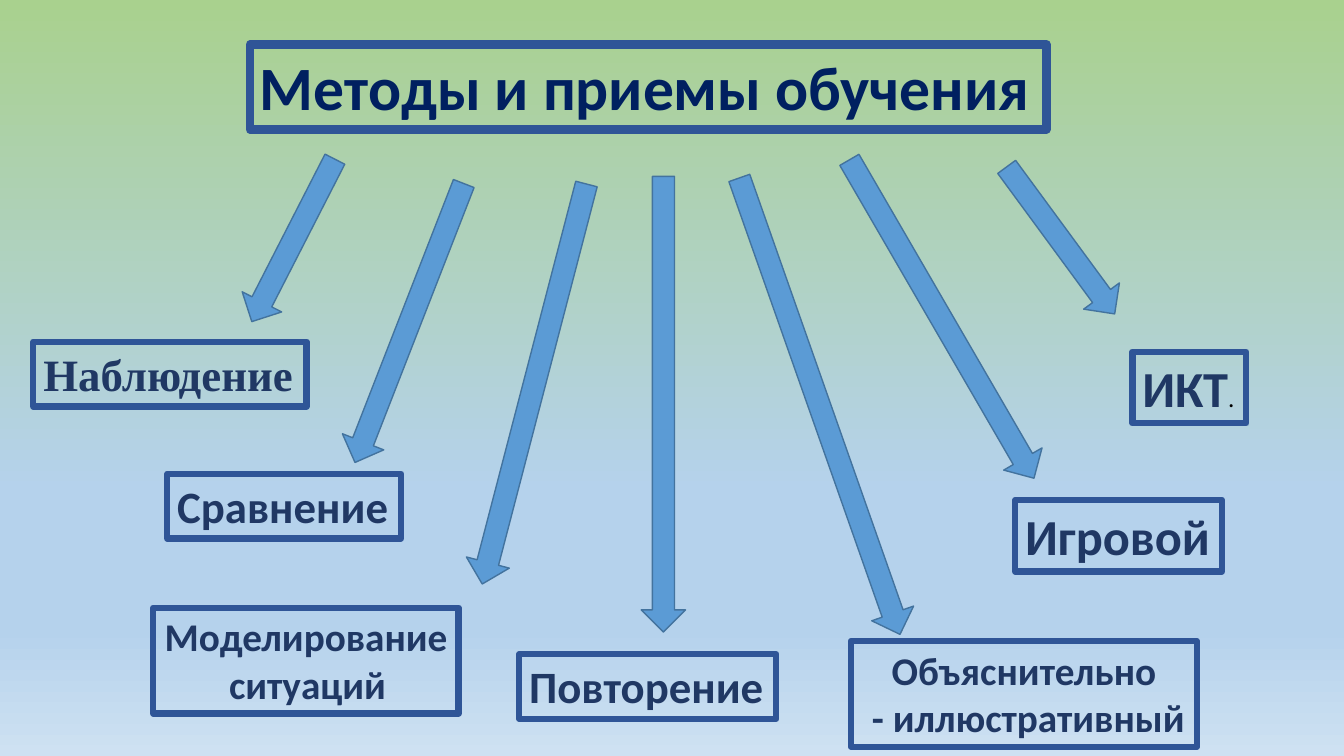
from dataclasses import dataclass
from lxml.etree import SubElement as Sub
from pptx import Presentation as Deck
from pptx.dml.color import RGBColor as Rgb
from pptx.enum.shapes import MSO_SHAPE as Kind
from pptx.enum.text import MSO_AUTO_SIZE as Fit, PP_ALIGN as Align
from pptx.oxml.ns import qn
from pptx.util import Inches, Pt

WIDE, HIGH = Inches(13.33), Inches(7.5)


@dataclass(frozen=True)
class Theme:
    sans: str = "Calibri"
    serif: str = "Times New Roman"
    title: str = "002060"
    label: str = "203864"
    mark: str = "000000"
    frame: str = "2F5597"
    arrow: str = "5B9BD5"
    edge: str = "43739E"
    sky: tuple = ((0, "A9D18E"), (65, "B5D2EC"), (83, "B5D2EC"), (100, "CEE1F2"))
    huge: int = 44
    large: int = 36
    mid: int = 32
    small: int = 28
    tiny: int = 18


LOOK = Theme()

# Centre x, centre y and length in percent of the slide, then the turn
ARROWS = [
    (21.83, 31.8, 24.13, 27.1),
    (30.46, 42.73, 39.6, 21.3),
    (39.76, 50.8, 54.67, 14.6),
    (49.36, 53.47, 60.27, 0),
    (60.99, 53.73, 64, -19.4),
    (70.07, 42.2, 48.67, -30.1),
    (78.92, 31.8, 24.13, -36.3),
]

# Left, top and width in percent, type size, lines, small mark at the end
LABELS = [
    (12.45, 62.67, 17.4, LOOK.mid, ["Сравнение"], ""),
    (11.4, 80.4, 22.73, LOOK.small, ["Моделирование", " ситуаций"], " "),
    (38.63, 86.53, 19.13, LOOK.mid, ["Повторение"], ""),
    (63.32, 84.8, 25.73, LOOK.small, ["Объяснительно", " - иллюстративный"], ""),
    (75.54, 66.13, 15.38, LOOK.large, ["Игровой"], ""),
    (84.25, 46.53, 8.48, LOOK.large, ["ИКТ"], "."),
]


def across(share):
    return round(WIDE * share / 100)


def down(share):
    return round(HIGH * share / 100)


def apply(item, form):
    for name, value in form.items():
        setattr(item, name, value)


def write(para, text, size, face, color, bold=True):
    run = para.add_run()
    run.text = text
    apply(run.font, {"size": Pt(size), "name": face, "bold": bold})
    run.font.color.rgb = Rgb.from_string(color)


def paint(slide):
    """Vertical gradient behind everything."""
    fill = slide.background.fill
    fill.gradient()
    fill.gradient_angle = 270
    stops = slide.element.find(".//" + qn("a:gsLst"))
    for stop in list(stops):
        stops.remove(stop)
    for place, color in LOOK.sky:
        stop = Sub(stops, qn("a:gs"), pos=str(place * 1000))
        Sub(stop, qn("a:srgbClr"), val=color)


def outline(shape, color, width):
    shape.line.color.rgb = Rgb.from_string(color)
    shape.line.width = Pt(width)


def box(slide, left, top, width, size, lines, mark="",
        face=LOOK.sans, color=LOOK.label, border=4.5):
    """Framed text, as tall as its lines need."""
    tall = Pt(len(lines) * size * 1.22 + 7.2)
    shape = slide.shapes.add_textbox(across(left), down(top), across(width), tall)
    outline(shape, LOOK.frame, border)
    frame = shape.text_frame
    apply(frame, {"word_wrap": False, "auto_size": Fit.SHAPE_TO_FIT_TEXT})
    for i, line in enumerate(lines):
        para = frame.add_paragraph() if i else frame.paragraphs[0]
        if len(lines) > 1:
            para.alignment = Align.CENTER
        write(para, line, size, face, color)
    if mark:
        write(para, mark, LOOK.tiny, face, LOOK.mark, False)


def arrow(slide, x, y, length, turn):
    """Block arrow turned about its centre."""
    width, tall = across(3.3), down(length)
    shape = slide.shapes.add_shape(
        Kind.DOWN_ARROW, across(x) - width // 2, down(y) - tall // 2, width, tall)
    shape.rotation = turn
    shape.shadow.inherit = False
    shape.fill.solid()
    shape.fill.fore_color.rgb = Rgb.from_string(LOOK.arrow)
    outline(shape, LOOK.edge, 1)


def main():
    deck = Deck()
    apply(deck, {"slide_width": WIDE, "slide_height": HIGH})
    slide = deck.slides.add_slide(deck.slide_layouts[6])
    paint(slide)

    # Title
    box(slide, 18.6, 5.87, 59.26, LOOK.huge, ["Методы и приемы обучения"],
        color=LOOK.title, border=6)

    # Arrows from the title to the methods
    for item in ARROWS:
        arrow(slide, *item)

    # Methods
    box(slide, 2.48, 45.2, 20.33, LOOK.mid, ["Наблюдение"], face=LOOK.serif)
    for item in LABELS:
        box(slide, *item)

    deck.save("out.pptx")


if __name__ == "__main__":
    main()
